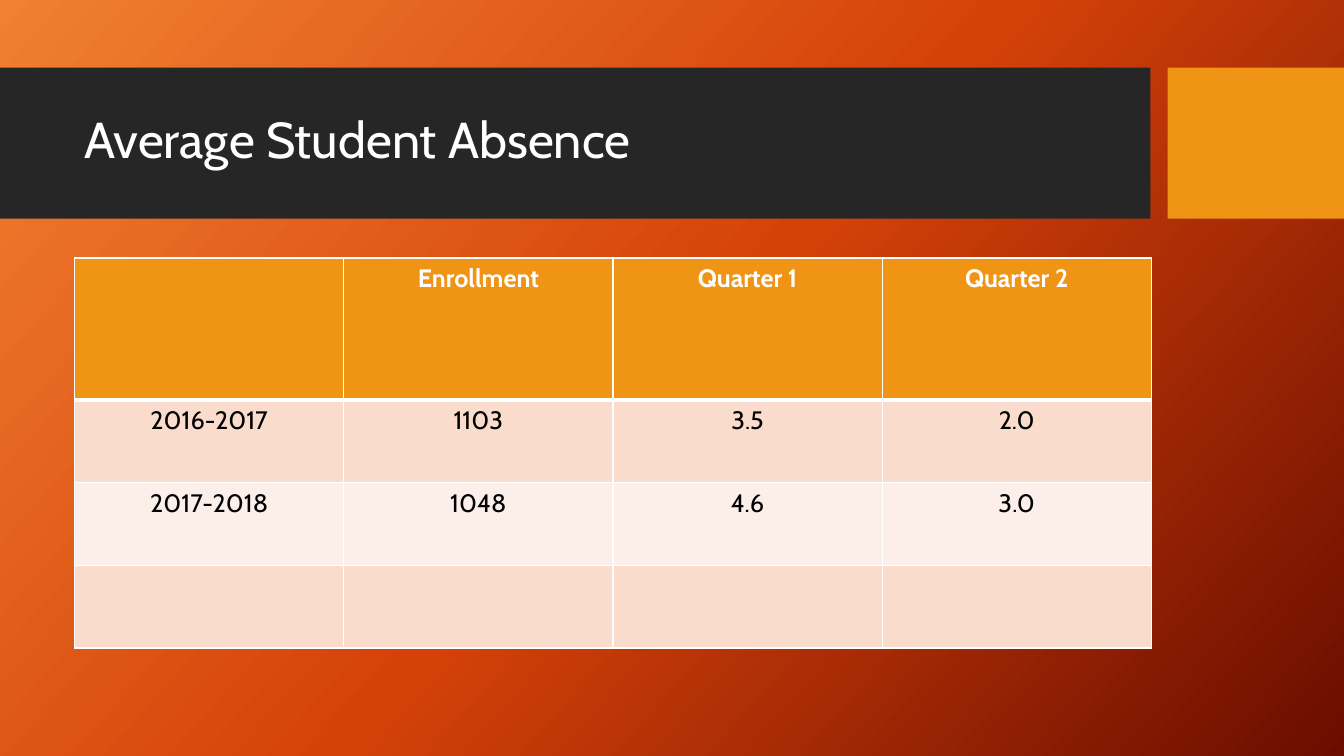
from copy import deepcopy

from lxml import etree
from pptx import Presentation
from pptx import util as u
from pptx.dml.color import RGBColor
from pptx.enum import shapes, text
from pptx.oxml import ns

PX = 9144  # EMU per px, 100 px to the inch
FONT = "Cabin"
WHITE, BLACK, CHARCOAL, ORANGE = "FFFFFF", "000000", "262626", "F09415"
BACKDROP = [(0, "F18031"), (0.5, "D54209"), (1, "6A0D00")]
BANDS = ["F9DCCC", "FCEEE8"]
ABSENCES = [
    ["", "Enrollment", "Quarter 1", "Quarter 2"],
    ["2016-2017", "1103", "3.5", "2.0"],
    ["2017-2018", "1048", "4.6", "3.0"],
    ["", "", "", ""],
]


def px(*lengths):
    return [u.Emu(length * PX) for length in lengths]


def color(hex_string):
    return RGBColor.from_string(hex_string)


def style_font(font, size, hex_string, bold=False):
    font.name, font.size, font.bold = FONT, u.Pt(size), bold
    font.color.rgb = color(hex_string)


def paint_background(slide, stops, angle):
    fill = slide.background.fill
    fill.gradient()
    fill.gradient_angle = 360 - angle
    stop_list = next(slide.element.iter(ns.qn("a:gsLst")))
    while len(stop_list) < len(stops):
        stop_list.append(deepcopy(stop_list[0]))
    for stop, (position, hex_string) in zip(fill.gradient_stops, stops):
        stop.position = position
        stop.color.rgb = color(hex_string)


def add_block(slide, left, top, width, height, hex_string):
    block = slide.shapes.add_shape(
        shapes.MSO_SHAPE.RECTANGLE, *px(left, top, width, height))
    block.shadow.inherit = False
    block.fill.solid()
    block.fill.fore_color.rgb = color(hex_string)
    block.line.fill.background()


def add_title(slide, left, top, width, height, wording):
    frame = slide.shapes.add_textbox(*px(left, top, width, height)).text_frame
    frame.word_wrap = True
    frame.vertical_anchor = text.MSO_ANCHOR.MIDDLE
    frame.text = wording
    heading = frame.paragraphs[0]
    heading.line_spacing = 0.9
    style_font(heading.runs[0].font, 36, WHITE)


def add_border(cell, side, points):
    borders = cell._tc.get_or_add_tcPr()
    border = etree.SubElement(borders, ns.qn(f"a:ln{side}"), w=str(u.Pt(points)))
    solid = etree.SubElement(border, ns.qn("a:solidFill"))
    etree.SubElement(solid, ns.qn("a:srgbClr"), val=WHITE)


def style_cell(cell, wording, row):
    header = row == 0
    # Borders come before the fill in the cell properties
    for side in "LRTB":
        under_header = (row, side) in [(0, "B"), (1, "T")]
        add_border(cell, side, 3 if under_header else 1)
    cell.fill.solid()
    cell.fill.fore_color.rgb = color(ORANGE if header else BANDS[(row - 1) % 2])
    cell.text = wording
    paragraph = cell.text_frame.paragraphs[0]
    paragraph.alignment = text.PP_ALIGN.CENTER
    style_font(paragraph.font, 18, WHITE if header else BLACK, header)
    for run in paragraph.runs:
        style_font(run.font, 18, WHITE if header else BLACK, header)


def add_absence_table(slide, left, top, column_width, row_heights, rows):
    columns = len(rows[0])
    table = slide.shapes.add_table(
        len(rows), columns,
        *px(left, top, column_width * columns, sum(row_heights))).table
    for column in table.columns:
        column.width = px(column_width)[0]
    for r, (height, row) in enumerate(zip(row_heights, rows)):
        table.rows[r].height = px(height)[0]
        for c, wording in enumerate(row):
            style_cell(table.cell(r, c), wording, r)


def main():
    deck = Presentation()
    deck.slide_width, deck.slide_height = px(1333, 750)
    slide = deck.slides.add_slide(deck.slide_layouts[6])
    paint_background(slide, BACKDROP, 42)

    # Title band and accent
    add_block(slide, 0, 67, 1141, 150, CHARCOAL)
    add_block(slide, 1158, 67, 175, 150, ORANGE)
    add_title(slide, 74, 82, 1051, 118, "Average Student Absence")

    # Absence by school year
    add_absence_table(slide, 74, 256, 267, [141, 82, 82, 82], ABSENCES)

    deck.save("out.pptx")


if __name__ == "__main__":
    main()
